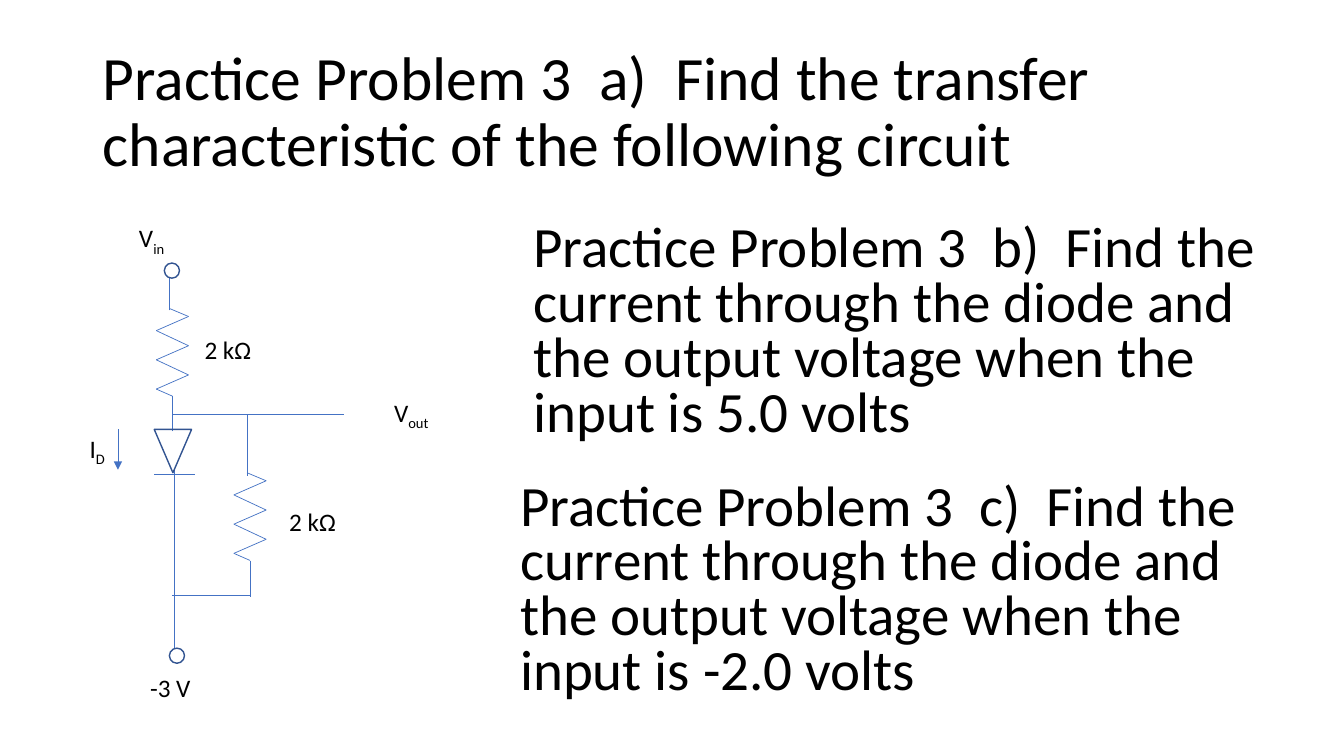
from itertools import pairwise

from lxml import etree
from pptx import Presentation
from pptx.dml.color import RGBColor
from pptx.enum.shapes import MSO_CONNECTOR, MSO_SHAPE
from pptx.enum.text import MSO_ANCHOR, MSO_AUTO_SIZE, PP_ALIGN
from pptx.oxml.ns import qn
from pptx.util import Emu, Pt

STRAIGHT = MSO_CONNECTOR.STRAIGHT
TRIANGLE = MSO_SHAPE.ISOSCELES_TRIANGLE
OVAL = MSO_SHAPE.OVAL
MIDDLE = MSO_ANCHOR.MIDDLE
LEFT = PP_ALIGN.LEFT
NO_AUTOFIT = MSO_AUTO_SIZE.NONE
GROW = MSO_AUTO_SIZE.SHAPE_TO_FIT_TEXT

EMU_PER_PX = 9144
BLACK, WHITE, WIRE, OUTLINE = "000000", "FFFFFF", "4472C4", "325491"
ZIGZAG = [(13, 0), (32, 8), (0, 22), (32, 37), (0, 51), (32, 66), (0, 80), (16, 87)]


def px(length):
    return Emu(length * EMU_PER_PX)


def color(hex_code):
    return RGBColor.from_string(hex_code)


def style(paragraph, size):
    paragraph.alignment = LEFT
    paragraph.font.size = Pt(size)
    paragraph.font.name = "Calibri"
    paragraph.font.color.rgb = color(BLACK)


def write_heading(frame, text, size, spacing):
    frame.text = text
    frame.word_wrap = True
    frame.auto_size = NO_AUTOFIT
    frame.vertical_anchor = MIDDLE
    style(frame.paragraphs[0], size)
    frame.paragraphs[0].line_spacing = spacing


def add_title(slide, left, top, width, height):
    title = slide.shapes.title
    title.left, title.top = px(left), px(top)
    title.width, title.height = px(width), px(height)
    write_heading(
        title.text_frame,
        "Practice Problem 3  a)  Find the transfer characteristic of the following circuit",
        44, 0.9)


def add_question(slide, left, top, part, voltage):
    question = slide.shapes.add_textbox(px(left), px(top), px(795), px(240))
    write_heading(
        question.text_frame,
        f"Practice Problem 3  {part})  Find the current through the diode "
        f"and the output voltage when the input is {voltage} volts",
        40.7, 0.8)


def add_wire(circuit, x1, y1, x2, y2, arrow=False):
    wire = circuit.shapes.add_connector(STRAIGHT, px(x1), px(y1), px(x2), px(y2))
    wire.line.color.rgb = color(WIRE)
    wire.line.width = Pt(0.5)
    if arrow:
        etree.SubElement(wire.line._get_or_add_ln(), qn("a:tailEnd"), type="triangle")
    etree.SubElement(wire._element.spPr, qn("a:effectLst"))


def add_symbol(circuit, kind, left, top, width, height):
    symbol = circuit.shapes.add_shape(kind, px(left), px(top), px(width), px(height))
    symbol.shadow.inherit = False
    symbol.line.color.rgb = color(OUTLINE)
    symbol.line.width = Pt(1)
    return symbol


def add_terminal(circuit, left, top):
    terminal = add_symbol(circuit, OVAL, left, top, 15, 15)
    terminal.fill.solid()
    terminal.fill.fore_color.rgb = color(WHITE)


def add_diode(circuit, left, top):
    anode = add_symbol(circuit, TRIANGLE, left, top, 37, 43)
    anode.fill.background()
    anode.rotation = 180
    add_wire(circuit, left + 40, top + 45, left, top + 45)


def add_resistor(circuit, left, top):
    for (x1, y1), (x2, y2) in pairwise(ZIGZAG):
        add_wire(circuit, left + x1, top + y1, left + x2, top + y2)


def add_label(circuit, left, top, width, text, subscript=""):
    label = circuit.shapes.add_textbox(px(left), px(top), px(width), px(40))
    frame = label.text_frame
    frame.word_wrap = True
    frame.auto_size = GROW
    paragraph = frame.paragraphs[0]
    paragraph.add_run().text = text
    if subscript:
        run = paragraph.add_run()
        run.text = subscript
        run._r.get_or_add_rPr().set("baseline", "-25000")
    style(paragraph, 18)


def add_circuit(slide, left, top):
    circuit = slide.shapes.add_group_shape()
    wires = [
        (94, 440, 94, 250),
        (92, 195, 262, 195),
        (89, 92, 89, 55),
        (92, 212, 92, 177),
        (166, 256, 166, 195),
        (169, 376, 169, 341),
        (92, 375, 169, 375),
    ]
    for x1, y1, x2, y2 in wires:
        add_wire(circuit, left + x1, top + y1, left + x2, top + y2)
    add_wire(circuit, left + 38, top + 210, left + 38, top + 250, arrow=True)
    for x, y in [(76, 90), (153, 253)]:
        add_resistor(circuit, left + x, top + y)
    add_diode(circuit, left + 74, top + 210)
    for x, y in [(84, 45), (89, 427)]:
        add_terminal(circuit, left + x, top + y)
    labels = [
        (49, 0, 118, "V", "in"),
        (302, 173, 107, "V", "out"),
        (0, 209, 71, "I", "D"),
        (114, 111, 118, "2 kΩ", ""),
        (198, 281, 118, "2 kΩ", ""),
        (60, 446, 118, "-3 V", ""),
    ]
    for x, y, width, text, subscript in labels:
        add_label(circuit, left + x, top + y, width, text, subscript)


def main():
    deck = Presentation()
    deck.slide_width, deck.slide_height = px(1333), px(750)
    slide = deck.slides.add_slide(deck.slide_layouts.get_by_name("Title Only"))
    add_title(slide, 92, 40, 1150, 145)
    add_question(slide, 519, 211, "b", "5.0")
    add_question(slide, 506, 467, "c", "-2.0")
    add_circuit(slide, 79, 216)
    deck.save("out.pptx")


if __name__ == "__main__":
    main()
